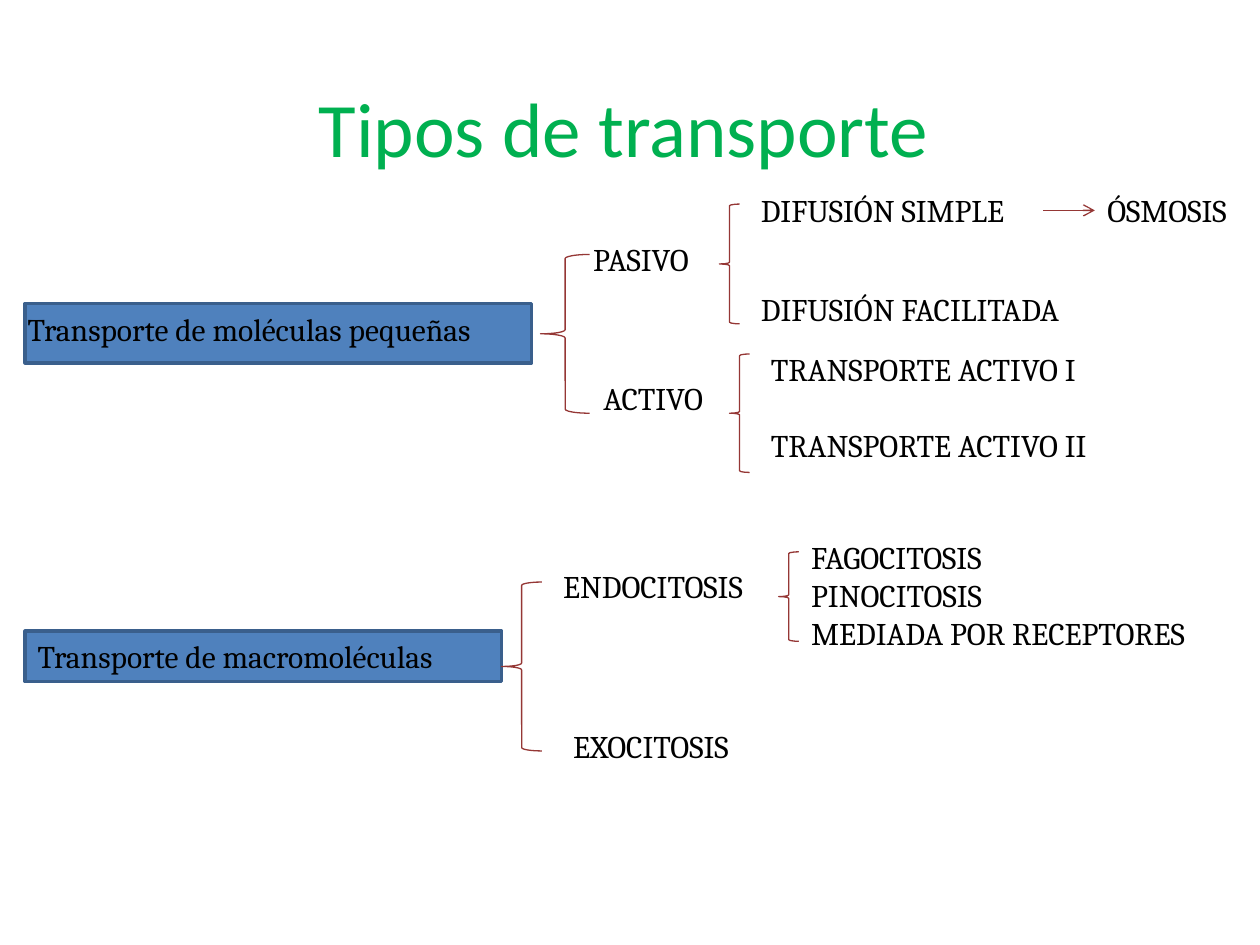
from pptx import Presentation
from pptx.dml.color import RGBColor as Rgb
from pptx.enum.shapes import MSO_CONNECTOR as Conn, MSO_SHAPE as Shape
from pptx.enum.text import MSO_ANCHOR as Anchor, MSO_AUTO_SIZE as Fit, PP_ALIGN as Align
from pptx.oxml.ns import qn
from pptx.util import Inches, Pt
from lxml import etree

BLUE, EDGE, RED, GREEN, BLACK = "4F81BD", "3A5F8C", "953735", "00B050", "000000"


def color(code):
    return Rgb.from_string(code)


def box(*sides):
    return [Inches(side) for side in sides]


def write(frame, text, size=18, font="Cambria", tint=BLACK, align=Align.LEFT, gap=0):
    """Fill a frame, one paragraph a line, with gap points between them."""
    for i, line in enumerate(text.split("\n")):
        para = frame.paragraphs[0] if i == 0 else frame.add_paragraph()
        para.alignment = align
        if i and gap:
            para.space_before = Pt(gap)
        run = para.add_run()
        run.text = line
        run.font.size = Pt(size)
        run.font.name = font
        run.font.color.rgb = color(tint)


def label(slide, text, x, y, w, h=0.4, **style):
    item = slide.shapes.add_textbox(*box(x, y, w, h))
    item.text_frame.word_wrap = False
    item.text_frame.auto_size = Fit.SHAPE_TO_FIT_TEXT
    write(item.text_frame, text, **style)
    return item


def outline(line, code, width):
    line.color.rgb = color(code)
    line.width = Pt(width)


def panel(slide, x, y, w, h):
    item = slide.shapes.add_shape(Shape.RECTANGLE, *box(x, y, w, h))
    item.shadow.inherit = False
    item.fill.solid()
    item.fill.fore_color.rgb = color(BLUE)
    outline(item.line, EDGE, 2)


def brace(slide, x, y, w, h):
    item = slide.shapes.add_shape(Shape.LEFT_BRACE, *box(x, y, w, h))
    item.shadow.inherit = False
    item.fill.background()
    outline(item.line, RED, 0.75)


def arrow(slide, start, end):
    """Join the right side of start to the left side of end."""
    item = slide.shapes.add_connector(Conn.STRAIGHT, 0, 0, 0, 0)
    item.begin_connect(start, 3)
    item.end_connect(end, 1)
    outline(item.line, RED, 0.75)
    props = item.line._get_or_add_ln()
    etree.SubElement(props, qn("a:tailEnd"), type="arrow")
    etree.SubElement(item._element.spPr, qn("a:effectLst"))


def heading(slide, x, y, w, h):
    title = slide.shapes.title
    title.left, title.top, title.width, title.height = box(x, y, w, h)
    title.text_frame.vertical_anchor = Anchor.MIDDLE
    write(title.text_frame, "Tipos de transporte", size=44, font="Calibri",
          tint=GREEN, align=Align.CENTER)


def small(slide, x, y):
    """Transport of small molecules, from the top left of its tree."""
    panel(slide, x, y + 0.94, 4.02, 0.47)
    label(slide, "Transporte de moléculas pequeñas", x - 0.08, y + 0.94, 3.95)
    brace(slide, x + 4.09, y + 0.55, 0.39, 1.26)
    label(slide, "PASIVO", x + 4.41, y + 0.39, 1.08)
    label(slide, "ACTIVO", x + 4.49, y + 1.49, 1.13)
    brace(slide, x + 5.51, y + 0.15, 0.16, 0.95)
    simple = label(slide, "DIFUSIÓN SIMPLE", x + 5.74, y, 2.34)
    label(slide, "DIFUSIÓN FACILITADA", x + 5.74, y + 0.78, 2.89)
    osmosis = label(slide, "ÓSMOSIS", x + 8.49, y, 1.31)
    arrow(slide, simple, osmosis)
    brace(slide, x + 5.59, y + 1.34, 0.16, 0.94)
    label(slide, "TRANSPORTE ACTIVO I\nTRANSPORTE ACTIVO II",
          x + 5.82, y + 1.26, 3.03, 1.01, gap=21.5)


def large(slide, x, y):
    """Transport of macromolecules, from the top left of its tree."""
    panel(slide, x, y + 0.79, 3.78, 0.4)
    label(slide, "Transporte de macromoléculas", x, y + 0.79, 3.54)
    brace(slide, x + 3.78, y + 0.4, 0.32, 1.34)
    label(slide, "ENDOCITOSIS", x + 4.17, y + 0.23, 1.88)
    label(slide, "EXOCITOSIS", x + 4.25, y + 1.5, 1.65)
    brace(slide, x + 5.98, y + 0.16, 0.16, 0.71)
    label(slide, "FAGOCITOSIS\nPINOCITOSIS\nMEDIADA POR RECEPTORES",
          x + 6.14, y, 3.56, 1.01)


def main():
    deck = Presentation()
    deck.slide_width, deck.slide_height = box(10, 7.5)
    slide = deck.slides.add_slide(deck.slide_layouts[5])
    heading(slide, 2.07, 0.38, 5.76, 1.25)
    small(slide, 0.2, 1.47)
    large(slide, 0.2, 4.22)
    deck.save("out.pptx")


if __name__ == "__main__":
    main()
